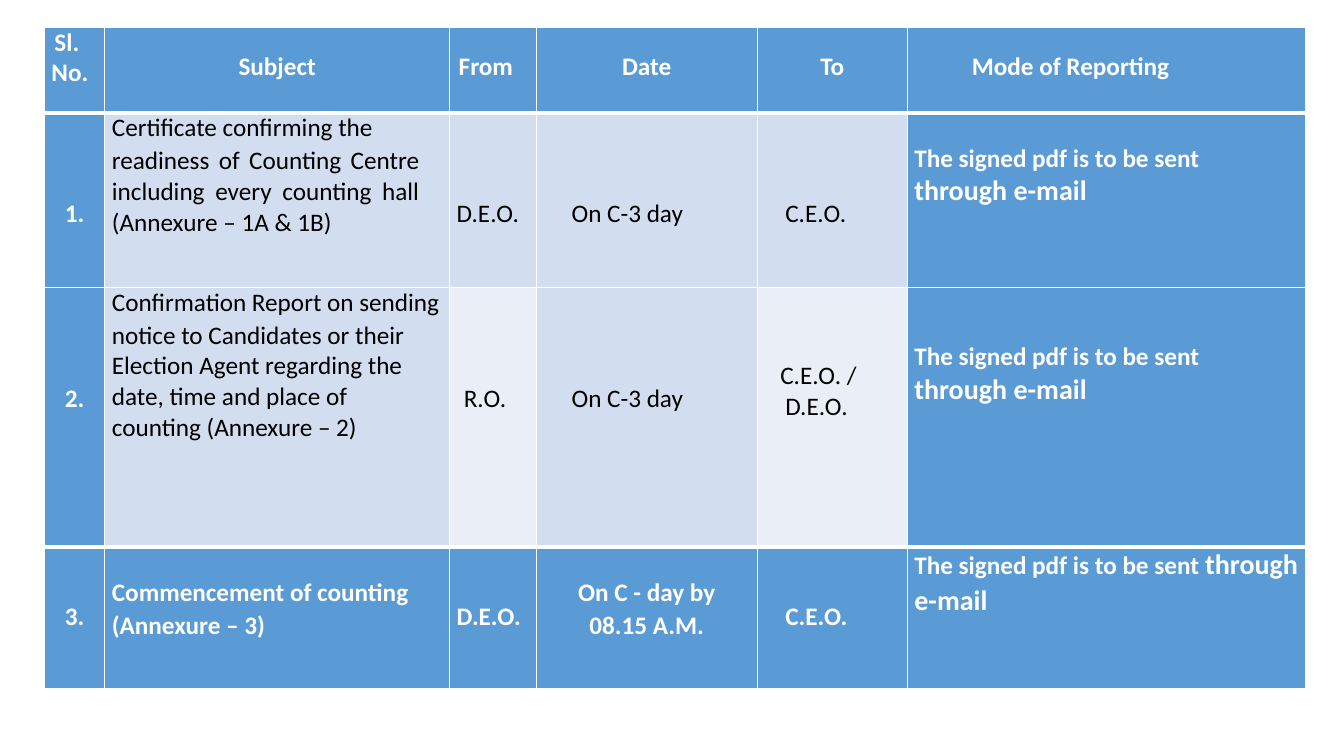
from pptx import Presentation
from pptx.dml.color import RGBColor
from pptx.enum.text import PP_ALIGN
from pptx.oxml import parse_xml
from pptx.oxml.ns import nsdecls
from pptx.util import Inches, Pt

LEFT, CENTER, JUSTIFY = PP_ALIGN.LEFT, PP_ALIGN.CENTER, PP_ALIGN.JUSTIFY
WHITE = RGBColor(0xFF, 0xFF, 0xFF)
BLACK = RGBColor(0, 0, 0)
BLUE = RGBColor(0x5B, 0x9B, 0xD5)
PALE = RGBColor(0xD2, 0xDE, 0xEF)
LIGHT = RGBColor(0xEA, 0xEF, 0xF7)

BOX = (0.44, 0.27, 12.51, 6.56)
COLS = (0.6, 3.42, 0.86, 2.19, 1.49, 3.95)
ROWS = (0.85, 1.73, 2.58, 1.4)
THIN, THICK = 1, 3
MODE = "The signed pdf is to be sent |through e-mail"

# Each cell: fill, top inset, left indent, right indent, alignment, paragraphs.
# Text after "|" is set larger.
CELLS = (
    (
        (BLUE, 0, 0.07, 0, LEFT, ("Sl. No.",)),
        (BLUE, 0.24, 0.82, 0.82, CENTER, ("Subject",)),
        (BLUE, 0.24, 0.09, 0, LEFT, ("From",)),
        (BLUE, 0.24, 0.52, 0.52, CENTER, ("Date",)),
        (BLUE, 0.24, 0.37, 0.37, CENTER, ("To",)),
        (BLUE, 0.24, 0.64, 0, LEFT, ("Mode of Reporting",)),
    ),
    (
        (BLUE, 0.85, 0.1, 0.1, CENTER, ("1.",)),
        (PALE, 0, 0.07, 0.3, JUSTIFY, (
            "Certificate confirming the",
            "readiness of Counting Centre including every counting hall "
            "(Annexure – 1A & 1B)")),
        (PALE, 0.85, 0.07, 0, LEFT, ("D.E.O.",)),
        (PALE, 0.85, 0.35, 0, LEFT, ("On C-3 day",)),
        (PALE, 0.85, 0.28, 0, LEFT, ("C.E.O.",)),
        (BLUE, 0.3, 0.07, 0.3, LEFT, (MODE,)),
    ),
    (
        (BLUE, 0.95, 0.1, 0.1, CENTER, ("2.",)),
        (PALE, 0, 0.07, 0.08, LEFT, (
            "Confirmation Report on sending",
            "notice to Candidates or their Election Agent regarding the "
            "date, time and place of counting (Annexure – 2)")),
        (LIGHT, 0.95, 0.14, 0, LEFT, ("R.O.",)),
        (PALE, 0.95, 0.35, 0, LEFT, ("On C-3 day",)),
        (LIGHT, 0.73, 0.28, 0.3, LEFT, ("C.E.O. / D.E.O.",)),
        (BLUE, 0.54, 0.07, 0.3, LEFT, (MODE,)),
    ),
    (
        (BLUE, 0.54, 0.1, 0.1, CENTER, ("3.",)),
        (BLUE, 0.3, 0.07, 0, LEFT,
         ("Commencement of counting", "(Annexure – 3)")),
        (BLUE, 0.54, 0.07, 0, LEFT, ("D.E.O.",)),
        (BLUE, 0.3, 0.23, 0.23, CENTER, ("On C - day by", "08.15 A.M.")),
        (BLUE, 0.54, 0.28, 0, LEFT, ("C.E.O.",)),
        (BLUE, 0, 0.07, 0, LEFT,
         ("The signed pdf is to be sent |through", "|e-mail")),
    ),
)
HANGS = {(0, 0): 0.03, (2, 4): -0.05}


def edge(cell, sides):
    """Draw white borders; sides maps L, R, T, B to widths in points."""
    props = cell._tc.get_or_add_tcPr()
    for spot, (side, width) in enumerate(sides.items()):
        props.insert(spot, parse_xml(
            f'<a:ln{side} {nsdecls("a")} w="{Pt(width)}"><a:solidFill>'
            f'<a:srgbClr val="{WHITE}"/></a:solidFill></a:ln{side}>'))


def write(cell, data, hang):
    fill, top, left, right, align, texts = data
    cell.fill.solid()
    cell.fill.fore_color.rgb = fill
    cell.margin_left = cell.margin_right = cell.margin_bottom = 0
    cell.margin_top = Inches(top)
    frame = cell.text_frame
    for n, text in enumerate(texts):
        para = frame.add_paragraph() if n else frame.paragraphs[0]
        para.alignment = align
        para.space_before = Pt(1.6 if n else 0)
        props = para._p.get_or_add_pPr()
        props.set("marL", str(Inches(left)))
        props.set("marR", str(Inches(right)))
        props.set("indent", str(Inches(hang)))
        para.font.name = "Calibri"
        para.font.bold = fill == BLUE
        para.font.color.rgb = WHITE if fill == BLUE else BLACK
        for part, size in zip(text.split("|"), (18, 20)):
            if part:
                run = para.add_run()
                run.text = part
                run.font.size = Pt(size)


def schedule(slide, box):
    """Place the reporting table, its grid scaled to the box."""
    x, y, w, h = box
    table = slide.shapes.add_table(
        len(ROWS), len(COLS), *(Inches(v) for v in box)).table
    for col, width in zip(table.columns, COLS):
        col.width = Inches(w * width / sum(COLS))
    for row, height in zip(table.rows, ROWS):
        row.height = Inches(h * height / sum(ROWS))
    last = len(ROWS) - 1
    for r, line in enumerate(CELLS):
        for c, data in enumerate(line):
            cell = table.cell(r, c)
            write(cell, data, HANGS.get((r, c), 0))
            edge(cell, {"L": THIN, "R": THIN,
                        "T": THICK if r in (1, last) else THIN,
                        "B": THICK if r in (0, last - 1) else THIN})


def main():
    deck = Presentation()
    deck.slide_width, deck.slide_height = Inches(13.33), Inches(7.5)
    schedule(deck.slides.add_slide(deck.slide_layouts[6]), BOX)
    deck.save("out.pptx")


if __name__ == "__main__":
    main()
